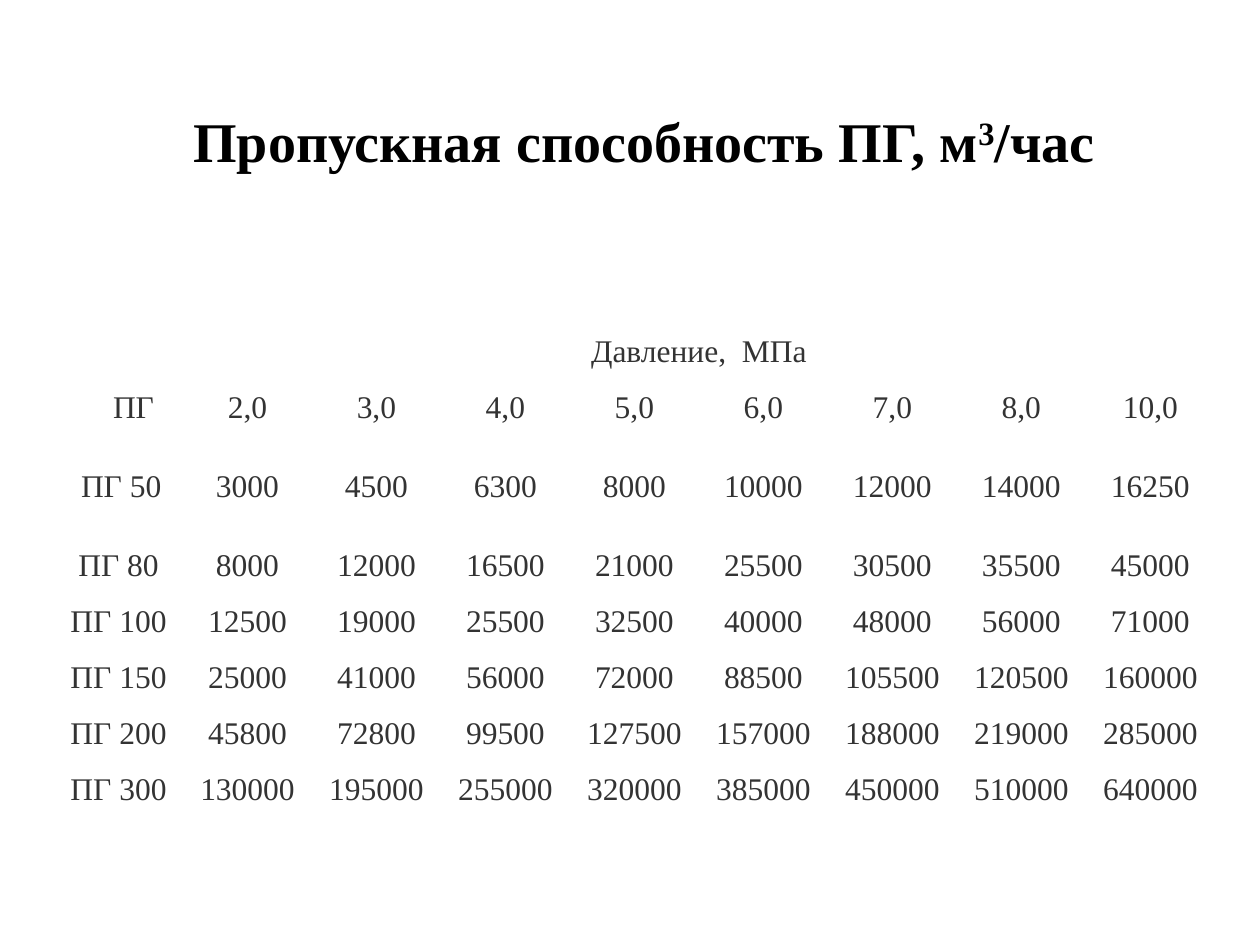
"""Build the slide with the pressure and throughput table."""
from pptx import Presentation
from pptx.dml.color import RGBColor
from pptx.enum.shapes import MSO_SHAPE
from pptx.enum.text import MSO_ANCHOR, PP_ALIGN
from pptx.util import Emu, Pt

FONT = "Times New Roman"
COLORS = {"white": "FFFFFF", "title": "000000", "cell": "333333"}
PRESSURES = ["2,0", "3,0", "4,0", "5,0", "6,0", "7,0", "8,0", "10,0"]
THROUGHPUT = {
    "ПГ 50": [3000, 4500, 6300, 8000, 10000, 12000, 14000, 16250],
    "ПГ 80": [8000, 12000, 16500, 21000, 25500, 30500, 35500, 45000],
    "ПГ 100": [12500, 19000, 25500, 32500, 40000, 48000, 56000, 71000],
    "ПГ 150": [25000, 41000, 56000, 72000, 88500, 105500, 120500, 160000],
    "ПГ 200": [45800, 72800, 99500, 127500, 157000, 188000, 219000, 285000],
    "ПГ 300": [130000, 195000, 255000, 320000, 385000, 450000, 510000, 640000],
}
LABEL_INDENTS = {"ПГ": 59, "ПГ 50": 27}
COL_WIDTH, ROW_HEIGHT, TALL_ROW, TALL_HEIGHT = 129, 56, 2, 102


def px(n):
    return Emu(round(n * 914400 / 126))


def rgb(name):
    return RGBColor.from_string(COLORS[name])


def add_run(p, text, size, color, bold=False):
    r = p.add_run()
    r.text = text
    r.font.name = FONT
    r.font.size = Pt(size)
    r.font.bold = bold
    r.font.color.rgb = rgb(color)
    return r


def add_title(s):
    sp = s.shapes.add_shape(MSO_SHAPE.RECTANGLE, px(123), px(66), px(1042), px(127))
    sp.shadow.inherit = False
    sp.fill.solid()
    sp.fill.fore_color.rgb = rgb("white")
    sp.line.fill.background()
    tf = sp.text_frame
    tf.word_wrap = True
    tf.vertical_anchor = MSO_ANCHOR.MIDDLE
    tf.margin_left = tf.margin_right = px(13)
    tf.margin_top, tf.margin_bottom = px(21), px(0)
    p = tf.paragraphs[0]
    p.alignment = PP_ALIGN.CENTER
    add_run(p, "Пропускная способность ПГ, м", 32, "title", True)
    power = add_run(p, "3", 32, "title", True)
    power.font._element.set("baseline", "30000")
    add_run(p, "/час", 32, "title", True)


def fill_cell(cell, text):
    indent = LABEL_INDENTS.get(text)
    cell.fill.solid()
    cell.fill.fore_color.rgb = rgb("white")
    cell.vertical_anchor = MSO_ANCHOR.MIDDLE
    cell.margin_left = px(indent or 4)
    cell.margin_right = cell.margin_top = cell.margin_bottom = px(4)
    p = cell.text_frame.paragraphs[0]
    p.alignment = PP_ALIGN.LEFT if indent else PP_ALIGN.CENTER
    p.font.size = Pt(18)
    if text:
        add_run(p, text, 18, "cell")


def add_throughput_table(s):
    rows = [["", "Давление,\u00a0 МПа".replace("\u00a0", " ")] + [""] * 7, ["ПГ"] + PRESSURES]
    rows += [[name] + [str(v) for v in values] for name, values in THROUGHPUT.items()]
    heights = [TALL_HEIGHT if i == TALL_ROW else ROW_HEIGHT for i in range(len(rows))]
    cols = len(rows[0])
    frame = s.shapes.add_table(len(rows), cols, px(54), px(324),
                               px(cols * COL_WIDTH), px(sum(heights)))
    table = frame.table
    table.first_row = table.horz_banding = False
    for col in table.columns:
        col.width = px(COL_WIDTH)
    for i, values in enumerate(rows):
        table.rows[i].height = px(heights[i])
        for j, text in enumerate(values):
            fill_cell(table.cell(i, j), text)
    table.cell(0, 1).merge(table.cell(0, cols - 1))


def main():
    prs = Presentation()
    prs.slide_width, prs.slide_height = px(1260), px(945)
    s = prs.slides.add_slide(prs.slide_layouts[6])
    add_throughput_table(s)
    add_title(s)
    prs.save("out.pptx")


if __name__ == "__main__":
    main()
